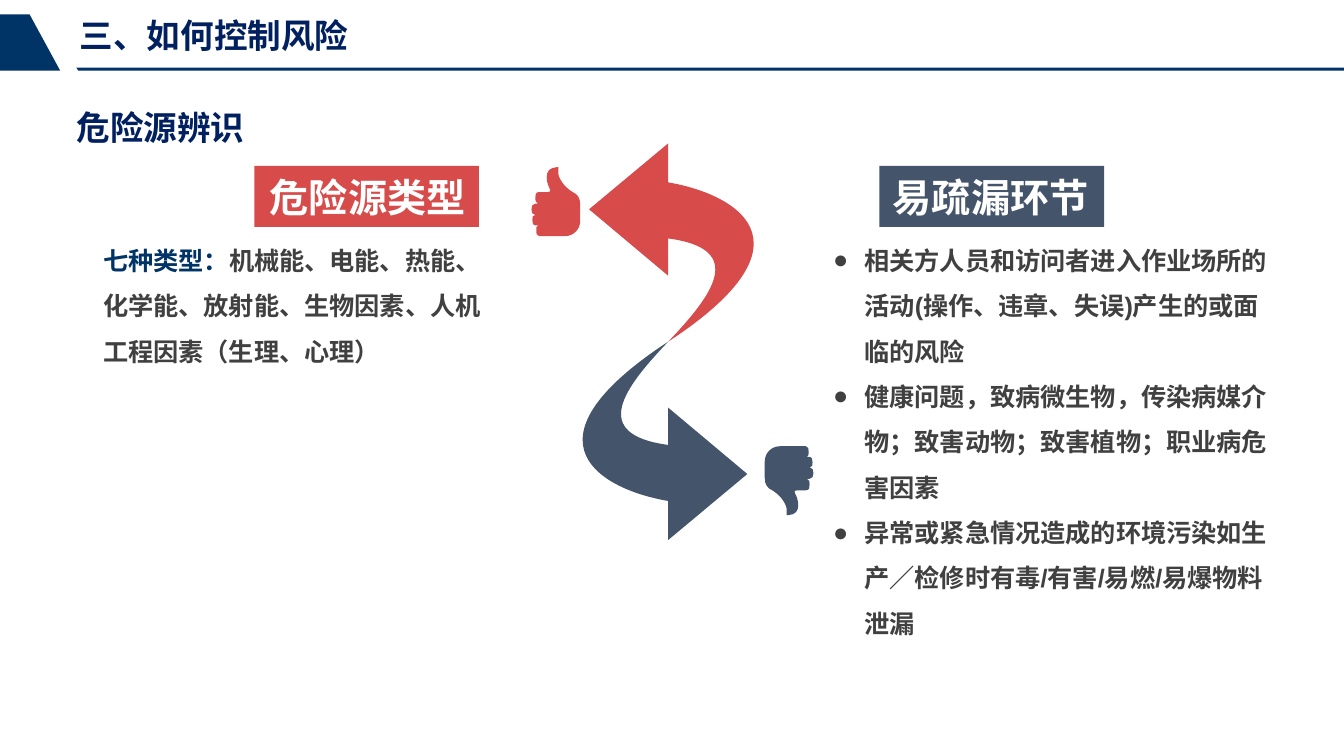
from lxml import etree
from pptx import Presentation
from pptx.dml.color import RGBColor
from pptx.enum.shapes import MSO_SHAPE
from pptx.enum.text import MSO_ANCHOR, MSO_AUTO_SIZE, PP_ALIGN
from pptx.oxml.ns import qn
from pptx.util import Pt

RECTANGLE = MSO_SHAPE.RECTANGLE
TOP, MIDDLE = MSO_ANCHOR.TOP, MSO_ANCHOR.MIDDLE
LEFT, RIGHT = PP_ALIGN.LEFT, PP_ALIGN.RIGHT
NO_AUTOFIT = MSO_AUTO_SIZE.NONE

NAVY = RGBColor(0x00, 0x33, 0x66)
HEADING = RGBColor(0x00, 0x20, 0x60)
RED = RGBColor(0xD7, 0x4B, 0x4B)
SLATE = RGBColor(0x44, 0x54, 0x6A)
BODY = RGBColor(0x40, 0x40, 0x40)
WHITE = RGBColor(0xFF, 0xFF, 0xFF)

FONT = "Arial"
TITLE_SIZE, LABEL_SIZE, BODY_SIZE = 25.3, 29.5, 19
SLIDE_WIDTH, SLIDE_HEIGHT = 1012.32, 569.52

# Outlines in points: a start, then one point for a line or three for a curve
ARROW = [
    (0, -120), [(0, -149.4)], [(-59.6, -99.7)], [(0, -49.7)], [(0, -77.8)],
    [(59.8, -69.8), (33, -34.6), (0, 0)],
    [(117.4, -77), (47.5, -112), (0, -120)],
]
THUMB = [
    (0, 32.4),
    [(0, 34.6), (0.7, 36.7), (2.9, 36.7)],
    [(0.7, 36.7), (0.7, 38.2), (0.7, 40.3)],
    [(0.7, 42.5), (0.7, 44.6), (3.6, 44.6)],
    [(5, 44.6)],
    [(3.6, 44.6), (3.6, 46.8), (3.6, 48.2)],
    [(3.6, 50.4), (3.6, 52.6), (5.8, 52.6)],
    [(25.2, 52.6)],
    [(31.7, 52.6), (36.7, 47.5), (36.7, 41)],
    [(36.7, 28.8)],
    [(36.7, 23.8), (34.6, 20.9), (31, 19.4)],
    [(27.4, 17.3), (21.6, 12.2), (20.2, 5.8)],
    [(20.2, 0.7)],
    [(20.2, 0.7), (11.5, 0), (11.5, 7.9)],
    [(11.5, 17.3), (17.3, 18.7), (12.2, 19.4)],
    [(5.8, 19.4)],
    [(2.9, 19.4), (2.9, 21.6), (2.9, 23.8)],
    [(2.9, 25.9), (2.9, 27.4), (5, 28.1)],
    [(2.9, 28.1)],
    [(0.7, 28.1), (0, 30.2), (0, 32.4)],
]
HEADER_RULE = [(57.6, 51), [(SLIDE_WIDTH, 51)], [(SLIDE_WIDTH, 53.3)], [(59, 53.3)]]
HEADER_WEDGE = [(22.3, 10.8), [(45.4, 53.3)], [(0, 53.3)], [(0, 10.8)]]

HAZARD_TYPES = [
    ("七种类型：", NAVY),
    ("机械能、电能、热能、化学能、放射能、生物因素、人机工程因素（生理、心理）", BODY),
]
OVERLOOKED = [
    "相关方人员和访问者进入作业场所的活动(操作、违章、失误)产生的或面临的风险",
    "健康问题，致病微生物，传染病媒介物；致害动物；致害植物；职业病危害因素",
    "异常或紧急情况造成的环境污染如生产／检修时有毒/有害/易燃/易爆物料泄漏",
]


def paint(shape, colour):
    shape.shadow.inherit = False
    shape.fill.solid()
    shape.fill.fore_color.rgb = colour
    shape.line.fill.background()


def bend_segments(shape, segments):
    """Join the three straight steps of each curved segment into one curve."""
    steps = iter(list(shape._element.iter(qn("a:lnTo"))))
    for segment in segments:
        group = [next(steps) for _ in segment]
        if len(group) == 3:
            curve = etree.Element(qn("a:cubicBezTo"))
            group[0].addprevious(curve)
            for step in group:
                curve.append(step[0])
                step.getparent().remove(step)


def add_outline(slide, outline, colour, origin=(0, 0), turned=False):
    """Draw an outline at origin, turned by half a circle on request."""
    sign = -1 if turned else 1
    start, segments = outline[0], outline[1:]
    points = [start] + [point for segment in segments for point in segment]
    placed = [(Pt(origin[0] + sign * x), Pt(origin[1] + sign * y)) for x, y in points]
    builder = slide.shapes.build_freeform(*placed[0], scale=1.0)
    builder.add_line_segments(placed[1:], close=True)
    shape = builder.convert_to_shape()
    bend_segments(shape, segments)
    paint(shape, colour)


def set_frame(box, margins=(7.2, 3.6), anchor=TOP, wrap=True):
    frame = box.text_frame
    frame.auto_size = NO_AUTOFIT
    frame.word_wrap = wrap
    frame.vertical_anchor = anchor
    frame.margin_left = frame.margin_right = Pt(margins[0])
    frame.margin_top = frame.margin_bottom = Pt(margins[1])
    return frame


def add_span(para, text, *, size, colour):
    span = para.add_run()
    span.text = text
    span.font.name = FONT
    span.font.size = Pt(size)
    span.font.bold = True
    span.font.color.rgb = colour


def add_bullet(para, colour, indent=23.6):
    properties = para._p.get_or_add_pPr()
    properties.set("marL", str(Pt(indent)))
    properties.set("indent", str(-Pt(indent)))
    bullet_colour = etree.SubElement(properties, qn("a:buClr"))
    etree.SubElement(bullet_colour, qn("a:srgbClr"), val=str(colour))
    etree.SubElement(properties, qn("a:buFont"), typeface=FONT)
    etree.SubElement(properties, qn("a:buChar"), char="●")


def fill_heading(box, text):
    para = set_frame(box, margins=(0, 0), anchor=MIDDLE).paragraphs[0]
    para.alignment = LEFT
    add_span(para, text, size=TITLE_SIZE, colour=HEADING)


def add_text_box(slide, left, top, width, height):
    return slide.shapes.add_textbox(Pt(left), Pt(top), Pt(width), Pt(height))


def add_label(slide, text, left, colour, alignment):
    label = slide.shapes.add_shape(RECTANGLE, Pt(left), Pt(125), Pt(169.2), Pt(46))
    paint(label, colour)
    para = set_frame(label, margins=(10, 5), anchor=MIDDLE, wrap=False).paragraphs[0]
    para.alignment = alignment
    add_span(para, text, size=LABEL_SIZE, colour=WHITE)


def add_body(slide, paragraphs, left, width, height, bulleted=False):
    frame = set_frame(add_text_box(slide, left, 169.7, width, height))
    for index, spans in enumerate(paragraphs):
        para = frame.add_paragraph() if index else frame.paragraphs[0]
        para.line_spacing = 1.5
        if bulleted:
            add_bullet(para, BODY)
        for text, colour in spans:
            add_span(para, text, size=BODY_SIZE, colour=colour)


def main():
    deck = Presentation()
    deck.slide_width, deck.slide_height = Pt(SLIDE_WIDTH), Pt(SLIDE_HEIGHT)
    slide = deck.slides.add_slide(deck.slide_layouts[5])

    # Header
    add_outline(slide, HEADER_RULE, NAVY)
    add_outline(slide, HEADER_WEDGE, NAVY)
    title = slide.shapes.title
    title.left, title.top, title.width, title.height = Pt(60), Pt(10.8), Pt(327), Pt(31)
    fill_heading(title, "三、如何控制风险")
    fill_heading(add_text_box(slide, 57.6, 80.6, 327, 31), "危险源辨识")

    # Paired arrows and thumbs
    pivot = (503.3, 257.4)
    add_outline(slide, ARROW, RED, pivot)
    add_outline(slide, ARROW, SLATE, pivot, turned=True)
    add_outline(slide, THUMB, RED, (400.3, 125.3))
    add_outline(slide, THUMB, SLATE, (612.7, 388.8), turned=True)

    # Hazard types
    add_label(slide, "危险源类型", 191.5, RED, RIGHT)
    add_body(slide, [HAZARD_TYPES], 70.6, 303.8, 106.6)

    # Steps that are easily overlooked
    add_label(slide, "易疏漏环节", 662.4, SLATE, LEFT)
    add_body(slide, [[(text, BODY)] for text in OVERLOOKED], 620.4, 346.3, 342.7,
             bulleted=True)

    deck.save("out.pptx")


if __name__ == "__main__":
    main()
